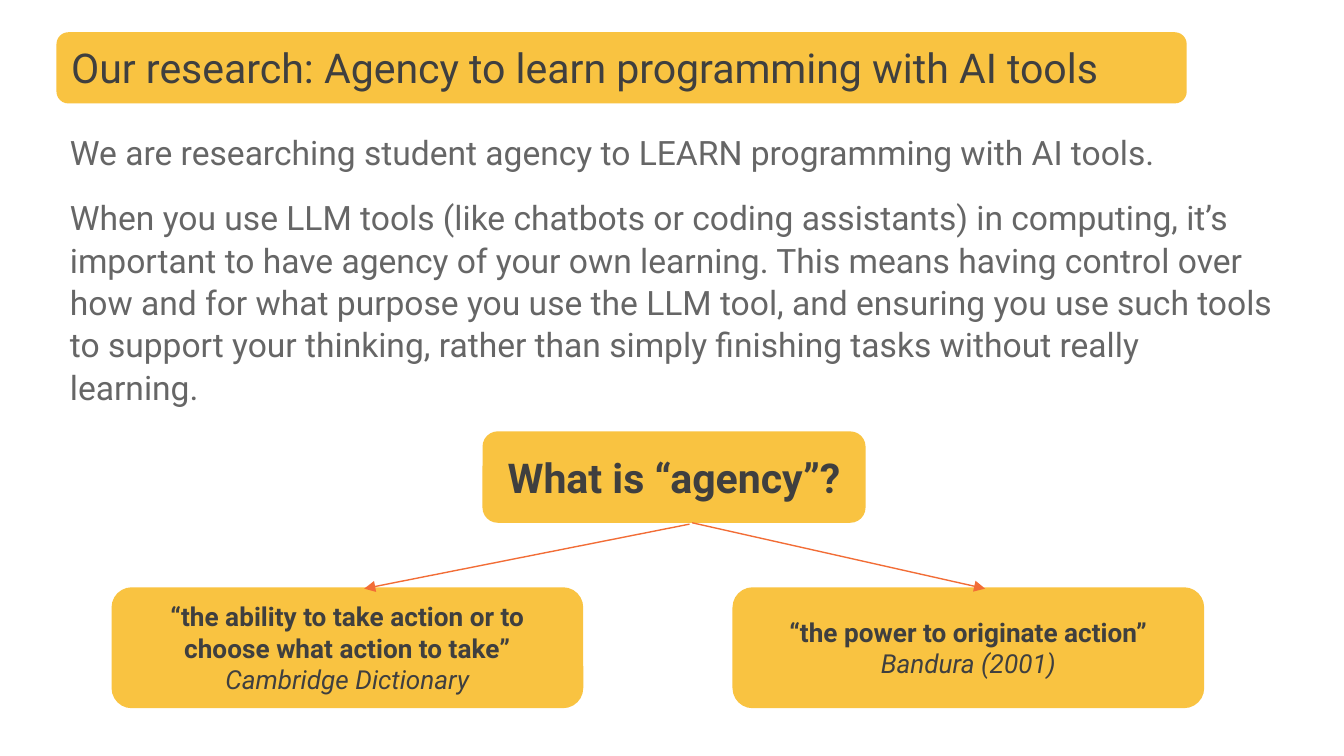
from typing import NamedTuple

from lxml.etree import SubElement
from pptx import Presentation
from pptx.dml.color import RGBColor
from pptx.enum.shapes import MSO_CONNECTOR as Connector, MSO_SHAPE as Preset
from pptx.enum.text import MSO_ANCHOR as Anchor, MSO_AUTO_SIZE as AutoSize, PP_ALIGN as Align
from pptx.oxml.ns import qn
from pptx.util import Emu, Pt

PX = 9144  # EMU per px, 100 px to the inch
FONT = "Roboto"
COLORS = {"yellow": "F9C341", "dark": "3F3F3F", "grey": "666666", "orange": "F26D36"}


class Area(NamedTuple):
    left: int
    top: int
    width: int
    height: int


class Line(NamedTuple):
    text: str
    size: int
    bold: bool = False
    italic: bool = False


class Card(NamedTuple):
    area: Area
    lines: list[Line]


class Arrow(NamedTuple):
    start: tuple[int, int]
    end: tuple[int, int]


def px(length: int) -> Emu:
    return Emu(length * PX)


def color(name: str) -> RGBColor:
    return RGBColor.from_string(COLORS[name])


def style(paragraph, size: int, color_name: str, bold: bool = False, italic: bool = False) -> None:
    for run in paragraph.runs:
        font = run.font
        font.name, font.size = FONT, Pt(size)
        font.bold, font.italic = bold, italic
        font.color.rgb = color(color_name)


def place(placeholder, area: Area, text: str, anchor: Anchor):
    placeholder.left, placeholder.top, placeholder.width, placeholder.height = map(px, area)
    frame = placeholder.text_frame
    frame.text = text
    frame.word_wrap = True
    frame.auto_size = AutoSize.NONE
    frame.vertical_anchor = anchor
    return frame.paragraphs


def add_panel(slide, area: Area):
    panel = slide.shapes.add_shape(Preset.ROUNDED_RECTANGLE, *map(px, area))
    panel.shadow.inherit = False
    panel.fill.solid()
    panel.fill.fore_color.rgb = color("yellow")
    panel.line.fill.background()
    return panel


def add_card(slide, card: Card) -> None:
    frame = add_panel(slide, card.area).text_frame
    frame.word_wrap = True
    frame.vertical_anchor = Anchor.MIDDLE
    frame.margin_left = frame.margin_right = frame.margin_top = frame.margin_bottom = px(10)
    frame.text = "\n".join(line.text for line in card.lines)
    for paragraph, line in zip(frame.paragraphs, card.lines):
        paragraph.alignment = Align.CENTER
        style(paragraph, line.size, "dark", line.bold, line.italic)


def add_arrow(slide, arrow: Arrow) -> None:
    connector = slide.shapes.add_connector(Connector.STRAIGHT, *map(px, arrow.start + arrow.end))
    connector.line.color.rgb = color("orange")
    connector.line.width = Pt(0.75)
    properties = connector._element.spPr
    SubElement(properties.find(qn("a:ln")), qn("a:tailEnd"), type="triangle")
    SubElement(properties, qn("a:effectLst"))


TITLE = "Our research: Agency to learn programming with AI tools"
INTRO = [
    "We are researching student agency to LEARN programming with AI tools.",
    "When you use LLM tools (like chatbots or coding assistants) in computing, it’s important "
    "to have agency of your own learning. This means having control over how and for what "
    "purpose you use the LLM tool, and ensuring you use such tools to support your thinking, "
    "rather than simply finishing tasks without really learning.",
]
CARDS = [
    Card(Area(359, 321, 285, 68), [Line("What is “agency”?", 22, bold=True)]),
    Card(Area(83, 437, 351, 90), [
        Line("“the ability to take action or to choose what action to take”", 14, bold=True),
        Line("Cambridge Dictionary", 14, italic=True),
    ]),
    Card(Area(545, 437, 351, 90), [
        Line("“the power to originate action”", 14, bold=True),
        Line("Bandura (2001)", 14, italic=True),
    ]),
]
ARROWS = [Arrow((513, 390), (271, 438)), Arrow((515, 389), (733, 438))]


def main() -> None:
    # Widescreen 16:9 slide
    deck = Presentation()
    deck.slide_width = px(1000)
    deck.slide_height = Emu(deck.slide_width * 9 // 16)
    slide = deck.slides.add_slide(deck.slide_layouts[1])

    # Title on a yellow banner, which goes to the back
    banner = add_panel(slide, Area(42, 24, 841, 53))
    slide.shapes._spTree.insert(2, banner._element)
    for heading in place(slide.shapes.title, Area(43, 25, 841, 50), TITLE, Anchor.MIDDLE):
        heading.alignment = Align.LEFT
        style(heading, 22, "dark")

    # Introduction without bullets
    body = slide.placeholders[1]
    for index, intro in enumerate(place(body, Area(42, 92, 917, 228), "\n".join(INTRO), Anchor.TOP)):
        bullet = intro._p.get_or_add_pPr()
        bullet.set("marL", "0")
        bullet.set("indent", "0")
        SubElement(bullet, qn("a:buNone"))
        intro.line_spacing = 1.05
        intro.space_before = Pt(12 if index else 0)
        style(intro, 18, "grey")

    # Question, its two definitions and the arrows between them
    for card in CARDS:
        add_card(slide, card)
    for arrow in ARROWS:
        add_arrow(slide, arrow)

    deck.save("out.pptx")


if __name__ == "__main__":
    main()
